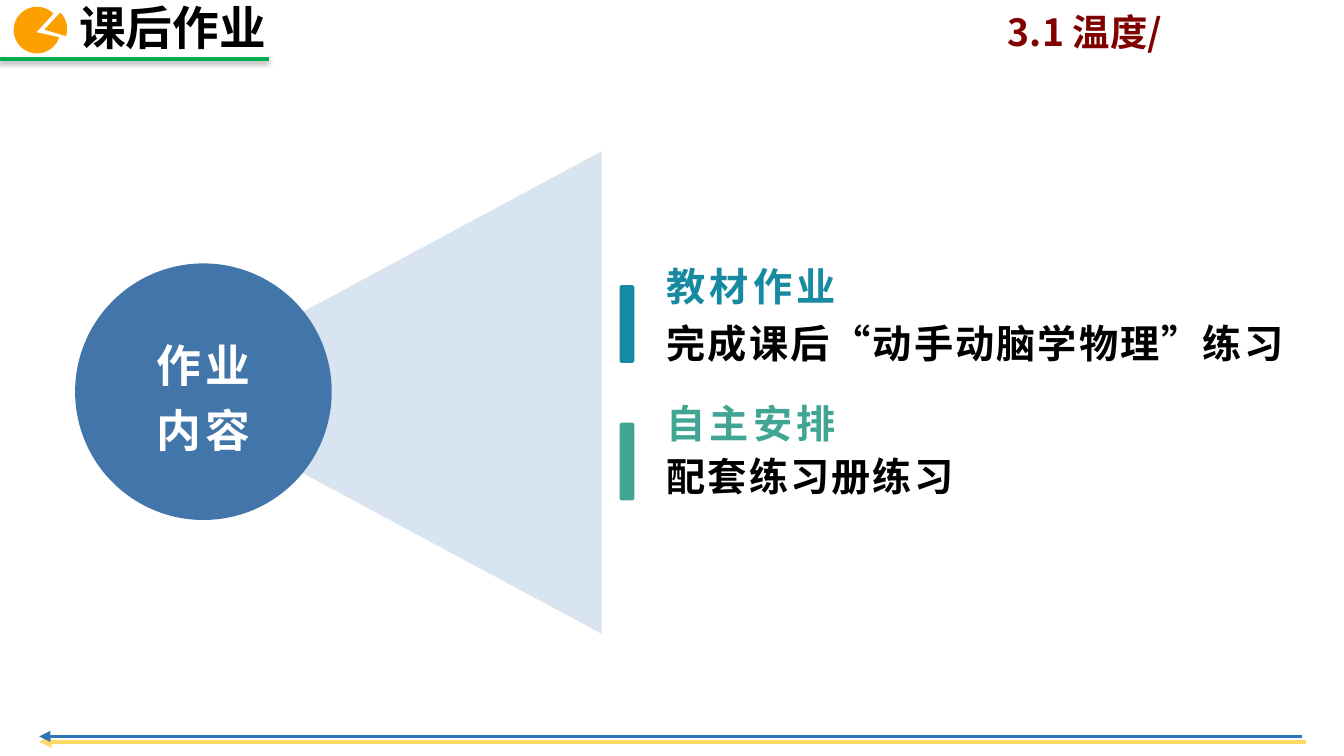
from dataclasses import dataclass
from math import cos, radians, sin

from lxml.etree import SubElement
from pptx import Presentation
from pptx.dml.color import RGBColor
from pptx.enum.shapes import MSO_CONNECTOR as CONN, MSO_SHAPE as SHAPE
from pptx.enum.text import MSO_ANCHOR as ANCHOR, MSO_AUTO_SIZE as AUTO, PP_ALIGN as ALIGN
from pptx.oxml.ns import qn
from pptx.util import Cm, Pt


@dataclass(frozen=True)
class Theme:
    font: str = "Noto Sans CJK SC"
    black: str = "000000"
    white: str = "FFFFFF"
    maroon: str = "800000"
    green: str = "00B050"
    orange: str = "FE9F00"
    yellow: str = "FFD966"
    arrow_blue: str = "2E75B6"
    pale: str = "D8E4F0"
    blue: str = "4276AA"
    teal: str = "178AA1"
    mint: str = "40A693"
    title: int = 25
    circle: int = 24
    item: int = 21
    chapter: int = 20


T = Theme()


def write(sp, text, size, color, spacing=0, line=1.0, align=ALIGN.LEFT,
          anchor=ANCHOR.TOP, top=0.1, bottom=0.1, wrap=True):
    tf = sp.text_frame
    tf.auto_size, tf.word_wrap, tf.vertical_anchor = AUTO.NONE, wrap, anchor
    tf.margin_left = tf.margin_right = Cm(0.18)
    tf.margin_top, tf.margin_bottom = Cm(top), Cm(bottom)
    tf.text = text
    for p in tf.paragraphs:
        p.alignment, p.line_spacing = align, line
        p.space_before = Pt(0)
        for r in p.runs:
            r.font.size, r.font.bold = Pt(size), True
            r.font.color.rgb = RGBColor.from_string(color)
            r.font.name = T.font
            rPr = r.font._element if hasattr(r.font, "_element") else r._r.get_or_add_rPr()
            SubElement(rPr, qn("a:ea"), typeface=T.font)
            if spacing:
                rPr.set("spc", str(round(spacing * 100)))


def paint(sp, color):
    sp.shadow.inherit = False
    sp.fill.solid()
    sp.fill.fore_color.rgb = RGBColor.from_string(color)
    sp.line.fill.background()


prs = Presentation()
prs.slide_width, prs.slide_height = Cm(25.4), Cm(14.29)
s = prs.slides.add_slide(prs.slide_layouts[5])

chapter = s.shapes.add_textbox(Cm(18.87), Cm(0.08), Cm(4.04), Cm(1.04))
write(chapter, "3.1 温度/", T.chapter, T.maroon)

title = s.shapes.title
title.left, title.top, title.width, title.height = Cm(1.32), Cm(-0.13), Cm(3.96), Cm(1.27)
write(title, "课后作业", T.title, T.black, wrap=False)

for x1, x2, y, color, width, arrow in [
    (-0.03, 5.08, 1.12, T.green, 2, False),
    (24.69, 0.74, 14.02, T.yellow, 2.25, True),
    (24.61, 0.74, 13.92, T.arrow_blue, 1.5, True),
]:
    rule = s.shapes.add_connector(CONN.STRAIGHT, Cm(x1), Cm(y), Cm(x2), Cm(y))
    rule.line.color.rgb = RGBColor.from_string(color)
    rule.line.width = Pt(width)
    spPr = rule._element.spPr
    effects = SubElement(spPr, qn("a:effectLst"))
    if arrow:
        SubElement(spPr.find(qn("a:ln")), qn("a:tailEnd"), type="triangle")
    else:
        shadow = SubElement(effects, qn("a:outerShdw"), blurRad=str(Pt(3.1)),
                            dist=str(Pt(1.6)), dir="5400000", rotWithShape="0")
        black = SubElement(shadow, qn("a:srgbClr"), val=T.black)
        SubElement(black, qn("a:alpha"), val="38000")

radius = 0.44
wedges = [(0.7, 0.57, 0.69, 0.61, 18, 317), (0.83, 0.55, 0.84, 0.56, -45, 18)]
pie = s.shapes.build_freeform(Cm(wedges[0][2]), Cm(wedges[0][3]))
for i, (cx, cy, tip_x, tip_y, start, end) in enumerate(wedges):
    if i:
        pie.move_to(Cm(tip_x), Cm(tip_y))
    angles = [radians(a) for a in range(start, end + 1, 3)]
    pie.add_line_segments([(Cm(cx + radius * cos(a)), Cm(cy + radius * sin(a))) for a in angles])
paint(pie.convert_to_shape(), T.orange)

beam = s.shapes.add_shape(SHAPE.ISOSCELES_TRIANGLE, Cm(2.57), Cm(3.18), Cm(9.12), Cm(8.48))
beam.rotation = 270
paint(beam, T.pale)

circle = s.shapes.add_shape(SHAPE.OVAL, Cm(1.42), Cm(4.98), Cm(4.85), Cm(4.85))
paint(circle, T.blue)
write(circle, "作业\n内容", T.circle, T.white, spacing=2.2, line=1.2, align=ALIGN.CENTER,
      anchor=ANCHOR.MIDDLE, top=0.18, bottom=0.18)

for label, detail, color, top, detail_top in [
    ("教材作业", "完成课后“动手动脑学物理”练习", T.teal, 4.98, 5.92),
    ("自主安排", "配套练习册练习", T.mint, 7.58, 8.43),
]:
    bar = s.shapes.add_shape(SHAPE.ROUNDED_RECTANGLE, Cm(11.71), Cm(top + 0.41), Cm(0.28), Cm(1.47))
    paint(bar, color)
    head = s.shapes.add_textbox(Cm(12.42), Cm(top), Cm(4.29), Cm(0.86))
    write(head, label, T.item, color, spacing=2.2, line=1.2, anchor=ANCHOR.BOTTOM, top=0.18, bottom=0)
    body = s.shapes.add_textbox(Cm(12.42), Cm(detail_top), Cm(12.9), Cm(1.04))
    write(body, detail, T.item, T.black, spacing=1.1, line=1.2, anchor=ANCHOR.MIDDLE, top=0)

prs.save("out.pptx")
